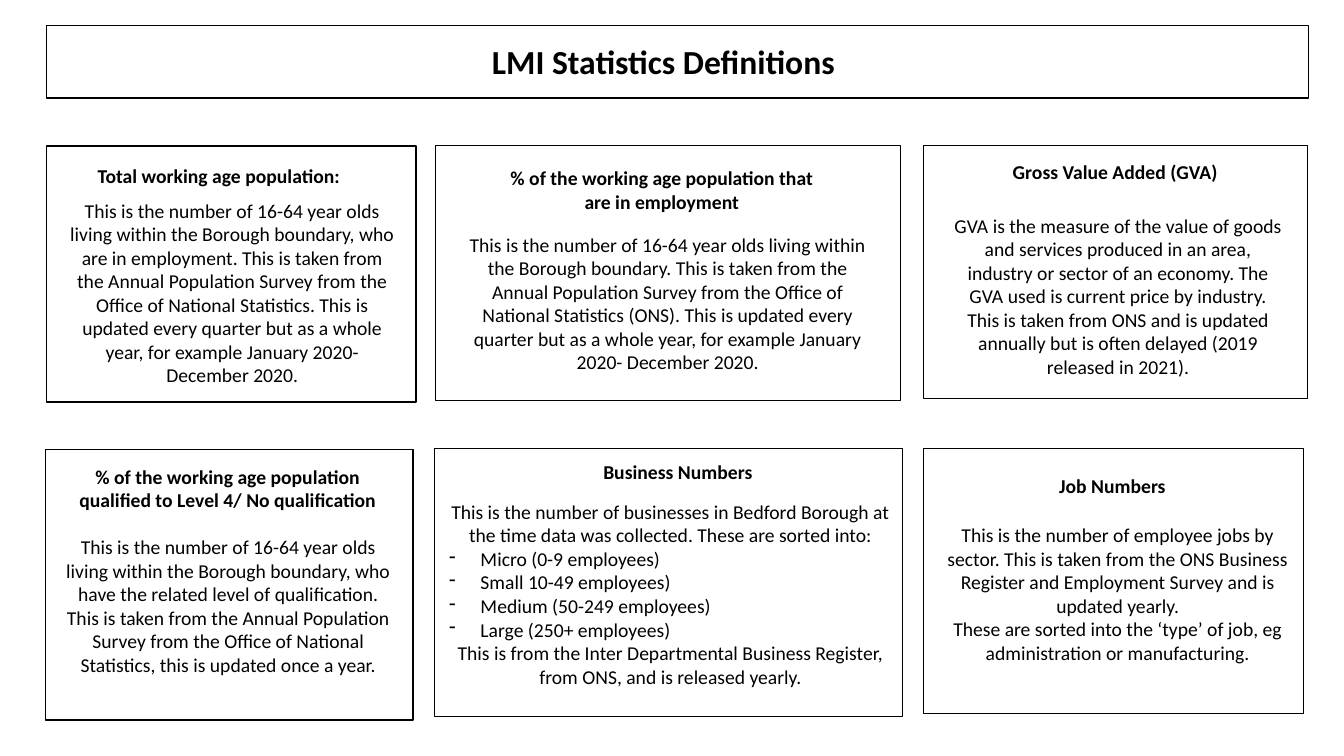
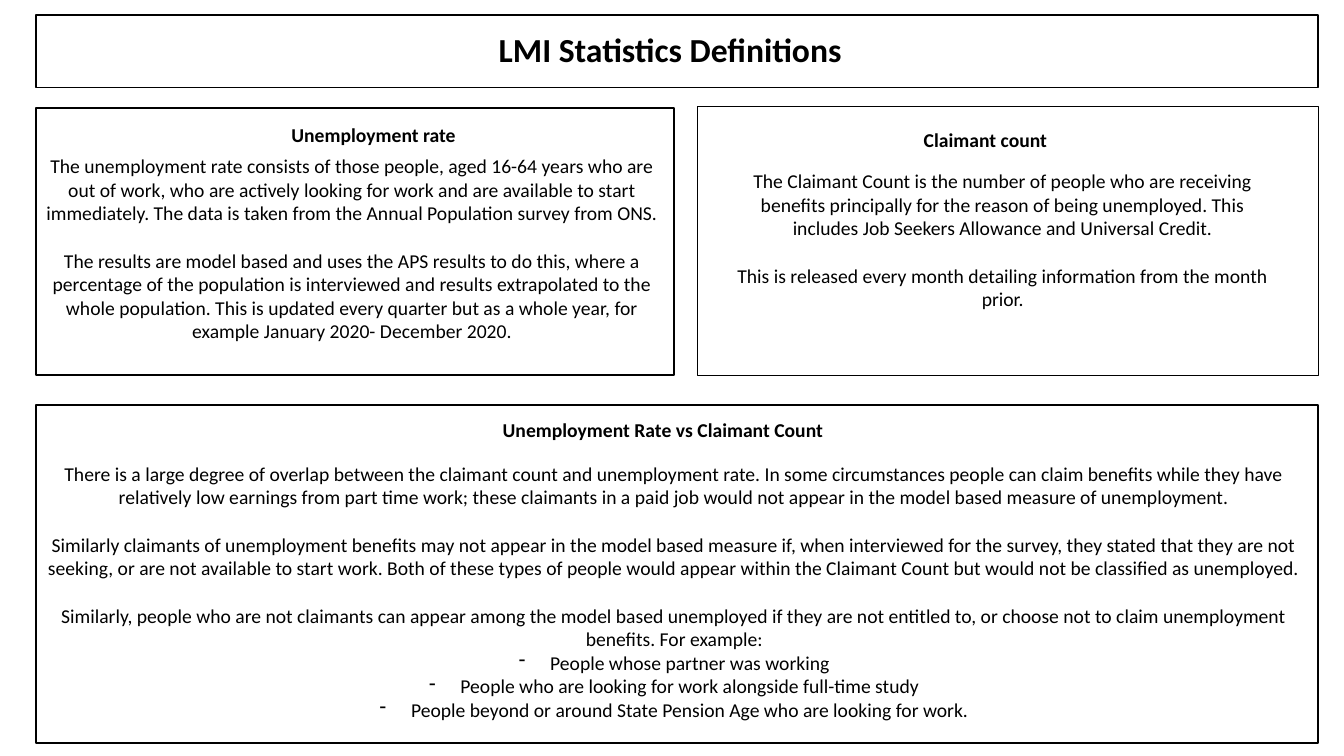
from lxml.etree import SubElement
from pptx import Presentation
from pptx.dml.color import RGBColor
from pptx.enum.shapes import MSO_SHAPE
from pptx.enum.text import PP_ALIGN
from pptx.oxml.ns import qn
from pptx.util import Cm, Pt

# Shared style
FONT = "Calibri"
INK = "000000"
HEAD = "LMI Statistics Definitions"
SIZE, BIG = 14, 24
LINE = 17  # points, one line of body text
DENT = Cm(0.79)

# Kinds of body line
TEXT, GAP, DASH, MID = "text", "gap", "dash", "mid"

# Cards: frame (x, y, w, h), head (x, y, w), body (x, y, w), title, lines
FIRST = [
    ((1.17, 3.68, 9.32, 6.45), (0.97, 4.01, 9.09), (1.45, 4.88, 8.81),
     "Total working age population:",
     [(TEXT, "This is the number of 16-64 year olds living within the Borough "
       "boundary, who are in employment. This is taken from the Annual "
       "Population Survey from the Office of National Statistics. This is "
       "updated every quarter but as a whole year, for example January 2020- "
       "December 2020.")]),
    ((10.97, 3.66, 11.73, 6.43), (12.4, 4.06, 8.56), (11.56, 5.74, 10.54),
     "% of the working age population that are in employment",
     [(TEXT, "This is the number of 16-64 year olds living within the Borough "
       "boundary. This is taken from the Annual Population Survey from the "
       "Office of National Statistics (ONS). This is updated every quarter "
       "but as a whole year, for example January 2020- December 2020.")]),
    ((23.27, 3.66, 9.68, 6.38), (24.23, 3.91, 7.75), (23.75, 5.26, 8.86),
     "Gross Value Added (GVA)",
     [(TEXT, "GVA is the measure of the value of goods and services produced "
       "in an area, industry or sector of an economy. The GVA used is current "
       "price by industry. This is taken from ONS and is updated annually but "
       "is often delayed (2019 released in 2021).")]),
    ((1.14, 11.33, 9.27, 6.81), (1.55, 11.58, 8.38), (1.35, 13.36, 8.81),
     "% of the working age population qualified to Level 4/ No qualification",
     [(TEXT, "This is the number of 16-64 year olds living within the Borough "
       "boundary, who have the related level of qualification. This is taken "
       "from the Annual Population Survey from the Office of National "
       "Statistics, this is updated once a year.")]),
    ((10.95, 11.3, 11.79, 6.76), (13.21, 11.46, 7.75), (11.07, 12.47, 11.66),
     "Business Numbers",
     [(TEXT, "This is the number of businesses in Bedford Borough at the time "
       "data was collected. These are sorted into:"),
      (DASH, "Micro (0-9 employees)"),
      (DASH, "Small 10-49 employees)"),
      (DASH, "Medium (50-249 employees)"),
      (DASH, "Large (250+ employees)"),
      (TEXT, "This is from the Inter Departmental Business Register, from "
       "ONS, and is released yearly.")]),
    ((23.27, 11.3, 9.58, 6.68), (24.16, 11.81, 7.75), (23.37, 13.06, 9.6),
     "Job Numbers",
     [(TEXT, "This is the number of employee jobs by sector. This is taken "
       "from the ONS Business Register and Employment Survey and is updated "
       "yearly."),
      (TEXT, "These are sorted into the ‘type’ of job, eg administration or "
       "manufacturing.")]),
]

SECOND = [
    ((0.91, 2.72, 16.08, 6.73), (5.54, 2.97, 7.75), (0.91, 3.76, 15.93),
     "Unemployment rate",
     [(TEXT, "The unemployment rate consists of those people, aged 16-64 "
       "years who are out of work, who are actively looking for work and are "
       "available to start immediately. The data is taken from the Annual "
       "Population survey from ONS."),
      (GAP, "The results are model based and uses the APS results to do this, "
       "where a percentage of the population is interviewed and results "
       "extrapolated to the whole population. This is updated every quarter "
       "but as a whole year, for example January 2020- December 2020.")]),
    ((17.58, 2.69, 15.65, 6.78), (20.96, 3.1, 7.75), (18.31, 4.14, 13.92),
     "Claimant count",
     [(TEXT, "The Claimant Count is the number of people who are receiving "
       "benefits principally for the reason of being unemployed. This "
       "includes Job Seekers Allowance and Universal Credit."),
      (GAP, "This is released every month detailing information from the "
       "month prior.")]),
    ((0.91, 10.21, 32.31, 8.51), (1.19, 10.41, 31.04), (0.84, 11.51, 32.31),
     "Unemployment Rate vs Claimant Count",
     [(TEXT, "There is a large degree of overlap between the claimant count "
       "and unemployment rate. In some circumstances people can claim "
       "benefits while they have relatively low earnings from part time work; "
       "these claimants in a paid job would not appear in the model based "
       "measure of unemployment."),
      (GAP, "Similarly claimants of unemployment benefits may not appear in "
       "the model based measure if, when interviewed for the survey, they "
       "stated that they are not seeking, or are not available to start work. "
       "Both of these types of people would appear within the Claimant Count "
       "but would not be classified as unemployed."),
      (GAP, "Similarly, people who are not claimants can appear among the "
       "model based unemployed if they are not entitled to, or choose not to "
       "claim unemployment benefits. For example:"),
      (MID, "People whose partner was working"),
      (MID, "People who are looking for work alongside full-time study"),
      (MID, "People beyond or around State Pension Age who are looking for "
       "work.")]),
]


def paint(code):
    return RGBColor.from_string(code)


def add_frame(slide, x, y, w, h):
    """Outlined box without fill."""
    box = slide.shapes.add_shape(MSO_SHAPE.RECTANGLE, Cm(x), Cm(y), Cm(w), Cm(h))
    box.shadow.inherit = False
    box.fill.background()
    box.line.color.rgb = paint(INK)
    box.line.width = Pt(1)


def add_dash(para):
    """Hanging dash bullet."""
    props = para._p.get_or_add_pPr()
    props.set("marL", str(DENT))
    props.set("indent", str(-DENT))
    SubElement(props, qn("a:buFontTx"))
    SubElement(props, qn("a:buChar"), char="-")


def add_text(slide, x, y, w, h, lines, size=SIZE, bold=False):
    """Text box with one paragraph for each line."""
    box = slide.shapes.add_textbox(Cm(x), Cm(y), Cm(w), Cm(h))
    frame = box.text_frame
    frame.word_wrap = True
    for i, (kind, text) in enumerate(lines):
        para = frame.add_paragraph() if i else frame.paragraphs[0]
        para.text = text
        para.alignment = PP_ALIGN.LEFT if kind == DASH else PP_ALIGN.CENTER
        if kind == GAP:
            para.space_before = Pt(LINE)
        if kind in (DASH, MID):
            add_dash(para)
        font = para.font
        font.name, font.size, font.bold = FONT, Pt(size), bold
        font.color.rgb = paint(INK)


def add_card(slide, frame, head, body, title, lines):
    """Frame with a bold title and the text below it."""
    add_frame(slide, *frame)
    add_text(slide, *head, body[1] - head[1], [(TEXT, title)], bold=True)
    add_text(slide, *body, frame[1] + frame[3] - body[1], lines)


def add_page(deck, band, head, cards):
    """Slide with a title band and its cards."""
    slide = deck.slides.add_slide(deck.slide_layouts[6])
    add_frame(slide, *band, 1.83)
    add_text(slide, *head, 31.6, 1.27, [(TEXT, HEAD)], BIG, True)
    for card in cards:
        add_card(slide, *card)


def main():
    deck = Presentation()
    deck.slide_width, deck.slide_height = Cm(33.87), Cm(19.05)
    add_page(deck, (1.17, 0.64, 31.8), (0.92, 0.91), FIRST)
    add_page(deck, (0.91, 0.38, 32.31), (1.09, 0.61), SECOND)
    deck.save("out.pptx")


if __name__ == "__main__":
    main()
